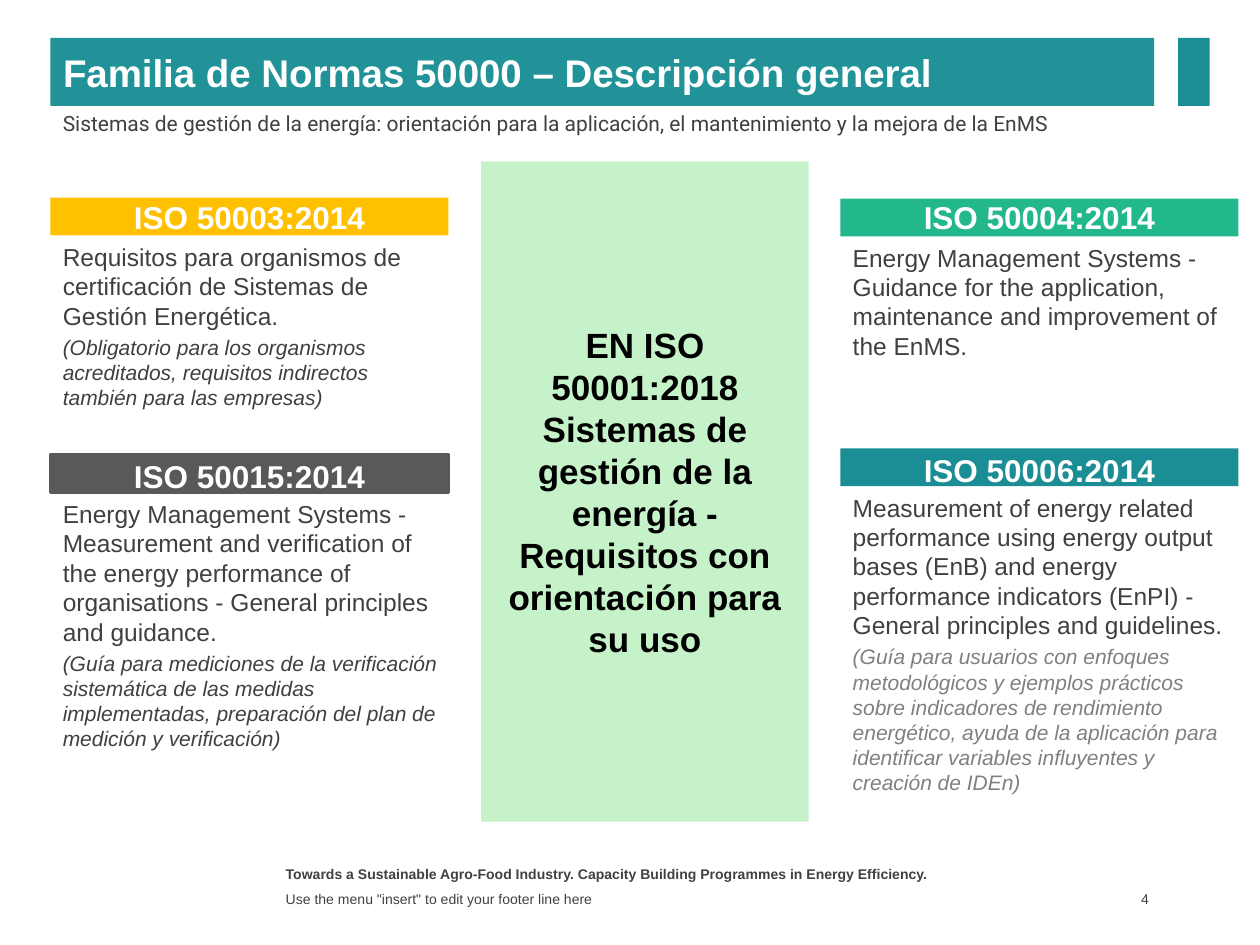
from pptx import Presentation
from pptx.dml.color import RGBColor
from pptx.enum.shapes import MSO_SHAPE
from pptx.enum.text import MSO_ANCHOR, MSO_AUTO_SIZE, PP_ALIGN
from pptx.util import Pt

RECTANGLE = MSO_SHAPE.RECTANGLE
TOP, MIDDLE = MSO_ANCHOR.TOP, MSO_ANCHOR.MIDDLE
LEFT, CENTER, RIGHT = PP_ALIGN.LEFT, PP_ALIGN.CENTER, PP_ALIGN.RIGHT
GROW, FIXED = MSO_AUTO_SIZE.SHAPE_TO_FIT_TEXT, MSO_AUTO_SIZE.NONE

COLORS = {
    "title": "209298",
    "teal": "1B8E95",
    "mint": "C6F2C9",
    "amber": "FFC000",
    "slate": "595959",
    "green": "22B88B",
    "white": "FFFFFF",
    "black": "000000",
    "text": "404040",
    "muted": "808080",
}


class StandardsSlide:
    font = "Arial"
    title_only_layout = 5
    column_width = 227.5
    note_gap = 2.4

    def __init__(self, presentation):
        layout = presentation.slide_layouts[self.title_only_layout]
        self.slide = presentation.slides.add_slide(layout)

    def color(self, name):
        return RGBColor.from_string(COLORS[name])

    def paint(self, shape, fill, outline=None):
        shape.fill.solid()
        shape.fill.fore_color.rgb = self.color(fill)
        if outline:
            shape.line.color.rgb = self.color(outline)
            shape.line.width = Pt(2)
        else:
            shape.line.fill.background()

    def frame(self, shape, anchor=TOP, side=7.2, right=None, fit=FIXED):
        frame = shape.text_frame
        frame.word_wrap = True
        frame.auto_size = fit
        frame.vertical_anchor = anchor
        frame.margin_left = Pt(side)
        frame.margin_right = Pt(side if right is None else right)
        frame.margin_top = frame.margin_bottom = Pt(3.6)
        return frame

    def add_text(self, paragraph, text, size, color="text", align=LEFT,
                 bold=False, italic=False, font=None):
        paragraph.alignment = align
        for index, line in enumerate(text.split("\n")):
            if index:
                paragraph.add_line_break()
            run = paragraph.add_run()
            run.text = line
            run.font.name = font or self.font
            run.font.size = Pt(size)
            run.font.bold = bold
            run.font.italic = italic
            run.font.color.rgb = self.color(color)

    def title(self, text, left, top, width, height):
        title = self.slide.shapes.title
        title.left, title.top = Pt(left), Pt(top)
        title.width, title.height = Pt(width), Pt(height)
        self.paint(title, "title")
        frame = self.frame(title, MIDDLE)
        self.add_text(frame.paragraphs[0], text, 22, "white", bold=True)

    def block(self, left, top, width, height, fill, outline=None):
        block = self.slide.shapes.add_shape(
            RECTANGLE, Pt(left), Pt(top), Pt(width), Pt(height))
        block.shadow.inherit = False
        self.paint(block, fill, outline)
        return block

    def panel(self, text, left, top, width, height):
        panel = self.block(left, top, width, height, "mint")
        frame = self.frame(panel, MIDDLE, side=5.8)
        self.add_text(frame.paragraphs[0], text, 20, "black", CENTER, bold=True)

    def text_box(self, left, top, width, height, **layout):
        box = self.slide.shapes.add_textbox(
            Pt(left), Pt(top), Pt(width), Pt(height))
        return self.frame(box, **layout)

    def label(self, text, left, top, width, height, size,
              align=LEFT, color="text", bold=False, font=None, **layout):
        frame = self.text_box(left, top, width, height, **layout)
        self.add_text(frame.paragraphs[0], text, size, color, align, bold, font=font)

    def standard(self, left, bar_top, label_rise, body_height, code,
                 description, fill, outline=None, note=None, note_color="text"):
        bar_height = 21.6
        self.block(left, bar_top, self.column_width, bar_height, fill, outline)
        self.label(code, left, bar_top - label_rise, self.column_width, 28.8, 18,
                   CENTER, "white", bold=True, fit=GROW)
        body = self.text_box(left, bar_top + bar_height, 231.1, body_height, fit=GROW)
        self.add_text(body.paragraphs[0], description, 14)
        if note:
            remark = body.add_paragraph()
            remark.space_before = Pt(self.note_gap)
            self.add_text(remark, note, 12, note_color, italic=True)


def main():
    presentation = Presentation()
    presentation.slide_width, presentation.slide_height = Pt(720), Pt(540)
    page = StandardsSlide(presentation)
    left_column, right_column, footer_left = 28.8, 480.2, 156.2

    page.title("Familia de Normas 50000 – Descripción general",
               left_column, 21.6, 630.7, 38.9)
    page.block(673.2, 21.6, 18, 38.9, "teal")
    page.label("Sistemas de gestión de la energía: orientación para la aplicación, "
               "el mantenimiento y la mejora de la EnMS",
               left_column, 59.8, 655.2, 21.6, 12, font="Roboto", fit=GROW)
    page.panel("EN ISO 50001:2018\nSistemas de gestión de la energía - "
               "Requisitos con orientación para su uso", 275, 92.2, 187.2, 377.3)

    page.standard(
        left_column, 113, 3.6, 104.4, "ISO 50003:2014",
        "Requisitos para organismos de certificación de Sistemas de "
        "Gestión Energética.", "amber",
        note="(Obligatorio para los organismos acreditados, requisitos "
             "indirectos también para las empresas)")
    page.standard(
        left_column, 259.9, 2.1, 173.5, "ISO 50015:2014",
        "Energy Management Systems - Measurement and verification of the energy "
        "performance of organisations - General principles and guidance.",
        "slate", outline="slate",
        note="(Guía para mediciones de la verificación sistemática de las medidas "
             "implementadas, preparación del plan de medición y verificación)")
    page.standard(
        right_column, 113.5, 3.6, 74.9, "ISO 50004:2014",
        "Energy Management Systems - Guidance for the application, "
        "maintenance and improvement of the EnMS.", "green")
    page.standard(
        right_column, 256.3, 2.1, 202.3, "ISO 50006:2014",
        "Measurement of energy related performance using energy output bases "
        "(EnB) and energy performance indicators (EnPI) - General principles "
        "and guidelines.", "teal",
        note="(Guía para usuarios con enfoques metodológicos y ejemplos prácticos "
             "sobre indicadores de rendimiento energético, ayuda de la aplicación "
             "para identificar variables influyentes y creación de IDEn)",
        note_color="muted")

    page.label("Towards a Sustainable Agro-Food Industry. Capacity Building "
               "Programmes in Energy Efficiency.",
               footer_left, 491, 396, 15.1, 8, bold=True)
    page.label('Use the menu "insert" to edit your footer line here',
               footer_left, 506.9, 396, 13.7, 8, anchor=MIDDLE)
    page.label("4", 619.2, 506.2, 40.3, 14.4, 8, RIGHT, anchor=MIDDLE, right=2.9)

    presentation.save("out.pptx")


if __name__ == "__main__":
    main()
